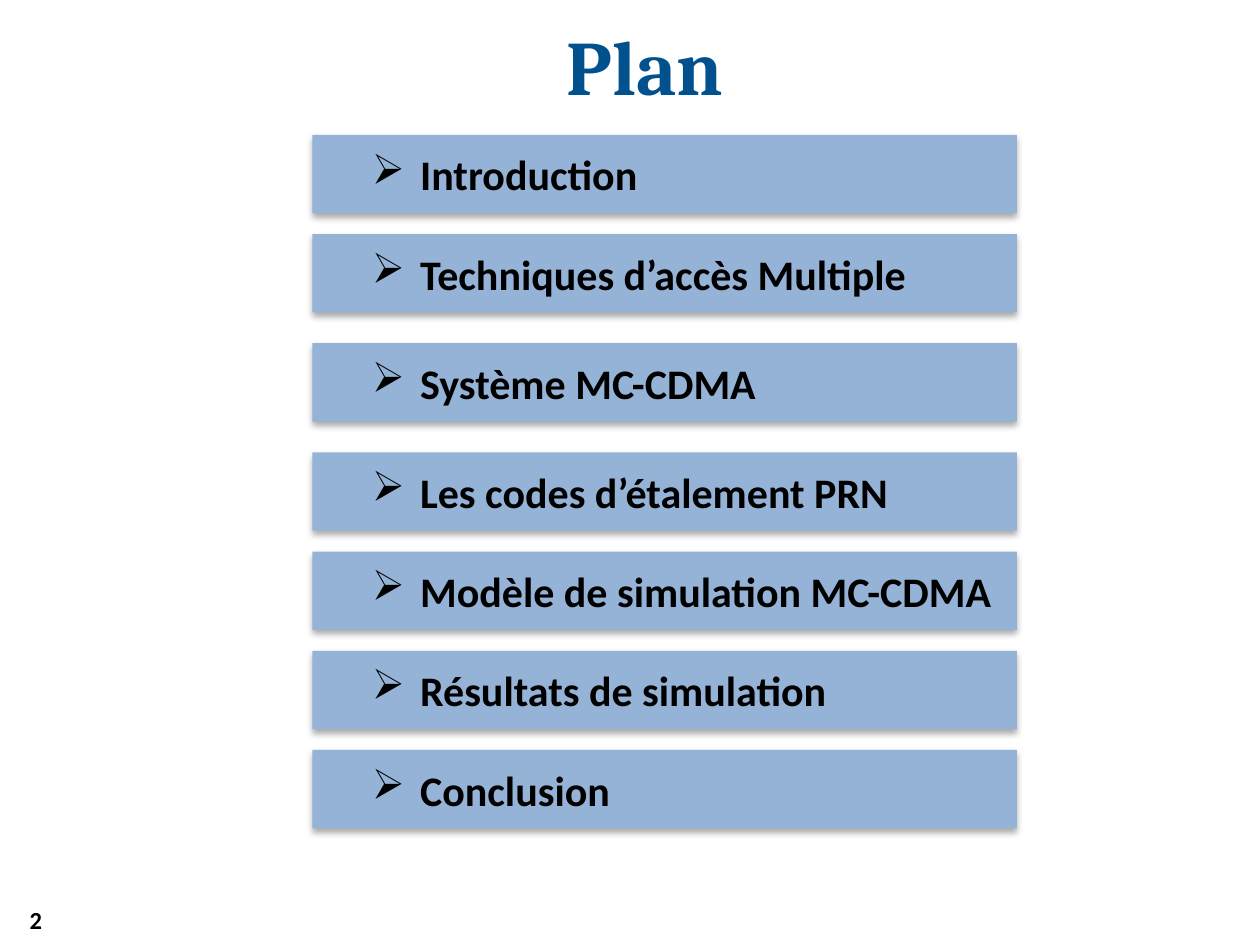
from dataclasses import dataclass

from lxml.etree import SubElement
from pptx import Presentation
from pptx.dml.color import RGBColor
from pptx.enum.shapes import MSO_SHAPE as Preset
from pptx.enum.text import MSO_ANCHOR as Anchor, PP_ALIGN as Align
from pptx.oxml.ns import qn
from pptx.util import Cm, Pt


@dataclass(frozen=True)
class Theme:
    title_color: RGBColor = RGBColor(0x00, 0x51, 0x8E)
    text_color: RGBColor = RGBColor(0x00, 0x00, 0x00)
    bar_color: RGBColor = RGBColor(0x95, 0xB3, 0xD7)
    title_font: str = "Cambria"
    body_font: str = "Calibri"
    title_size: Pt = Pt(44)
    topic_size: Pt = Pt(24)
    number_size: Pt = Pt(14)


theme = Theme()


def write(shape, text, *, size, font=theme.body_font, color=theme.text_color,
          align=Align.LEFT, margins=(0.25, 0.13, 0.25, 0.13), bullet=None, hanging=0.97):
    """Set bold, vertically centred text; margins (l, t, r, b) and hanging are in cm."""
    frame = shape.text_frame
    frame.word_wrap = True
    frame.vertical_anchor = Anchor.MIDDLE
    (frame.margin_left, frame.margin_top,
     frame.margin_right, frame.margin_bottom) = map(Cm, margins)
    paragraph = frame.paragraphs[0]
    paragraph.text = text
    paragraph.alignment = align
    if bullet:
        properties = paragraph._p.get_or_add_pPr()
        properties.set("marL", str(Cm(hanging)))
        properties.set("indent", str(-Cm(hanging)))
        SubElement(properties, qn("a:buChar"), char=bullet)
    style = paragraph.runs[0].font
    style.name, style.size, style.bold = font, size, True
    style.color.rgb = color


def cast_shadow(shape):
    """Give the shape a soft shadow straight below it."""
    shape.shadow.inherit = False
    effects = shape._element.spPr.find(qn("a:effectLst"))
    shadow = SubElement(effects, qn("a:outerShdw"), blurRad=str(Pt(3.5)),
                        dist=str(Pt(2.2)), dir="5400000", rotWithShape="0")
    black = SubElement(shadow, qn("a:srgbClr"), val="000000")
    SubElement(black, qn("a:alpha"), val="32000")


deck = Presentation()
deck.slide_width, deck.slide_height = Cm(25.4), Cm(19.05)
slide = deck.slides.add_slide(deck.slide_layouts[6])

title = slide.shapes.add_textbox(Cm(9.3), Cm(0), Cm(7.4), Cm(2.6))
write(title, "Plan", size=theme.title_size, font=theme.title_font,
      color=theme.title_color, align=Align.CENTER)

# Each topic with the gap below it, in cm
NARROW, WIDE = 0.42, 0.62
topics = [
    ("Introduction", NARROW),
    ("Techniques d’accès Multiple", WIDE),
    ("Système MC-CDMA", WIDE),
    ("Les codes d’étalement PRN", NARROW),
    ("Modèle de simulation MC-CDMA", NARROW),
    ("Résultats de simulation", NARROW),
    ("Conclusion", NARROW),
]
bar_height = 1.58
top = 2.72
for topic, gap in topics:
    bar = slide.shapes.add_shape(Preset.RECTANGLE, Cm(6.3), Cm(top), Cm(14.2), Cm(bar_height))
    bar.fill.solid()
    bar.fill.fore_color.rgb = theme.bar_color
    bar.line.fill.background()
    cast_shadow(bar)
    write(bar, topic, size=theme.topic_size, margins=(1.2, 0.1, 0.1, 0.1), bullet="➢")
    top += bar_height + gap

page_number = slide.shapes.add_textbox(Cm(0), Cm(18.03), Cm(1.1), Cm(1.02))
write(page_number, "2", size=theme.number_size, align=Align.RIGHT)

deck.save("out.pptx")
